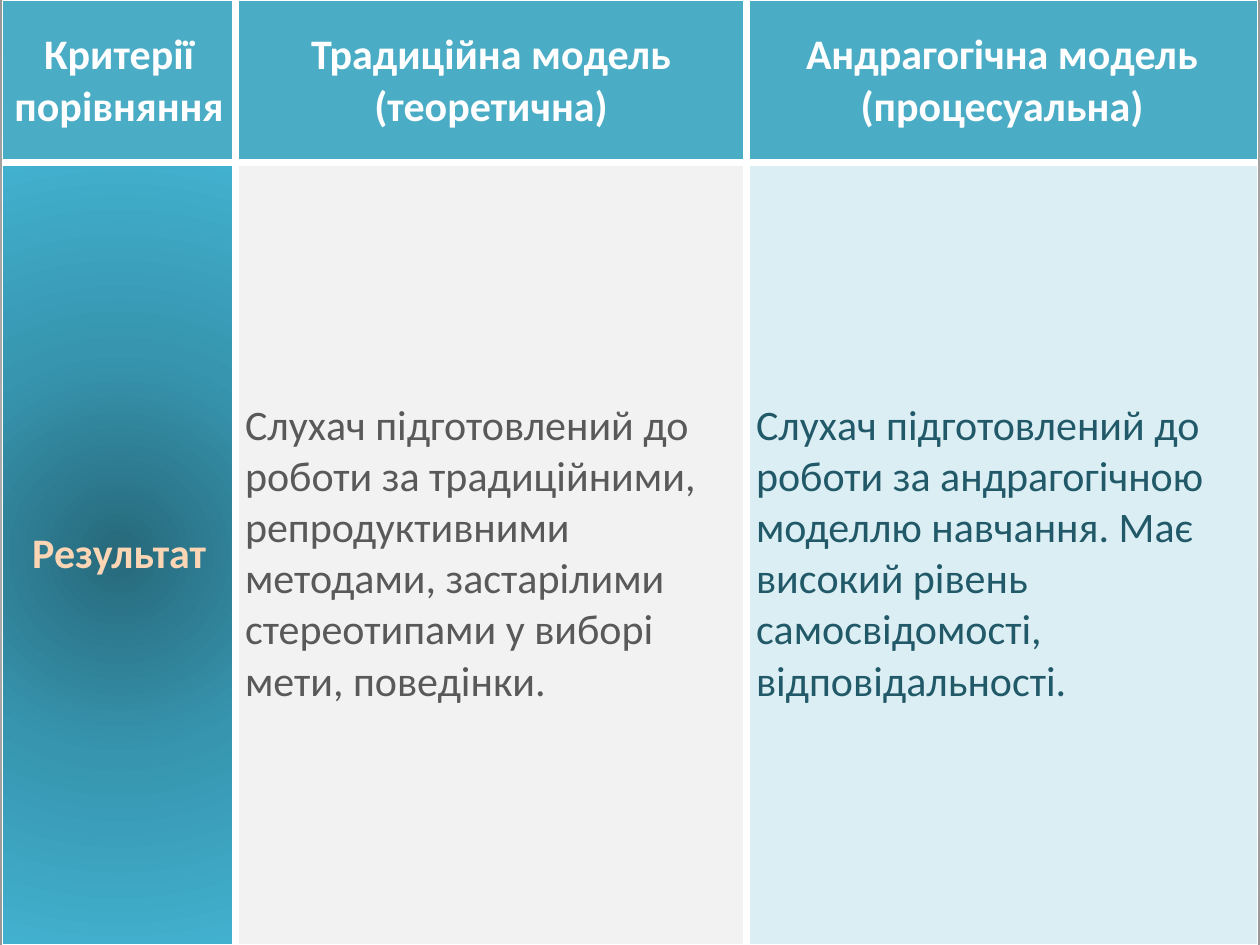
from pptx import Presentation
from pptx.dml.color import RGBColor
from pptx.enum.text import MSO_ANCHOR, PP_ALIGN
from pptx.oxml import parse_xml
from pptx.oxml.ns import nsdecls
from pptx.util import Cm, Pt

COLORS = {
    "white": "FFFFFF", "grey": "979797", "header": "4BACC6",
    "dark": "27697B", "middle": "3795AF", "light": "42B1CF",
    "peach": "FCD5B5", "text": "595959", "teal": "215968",
    "plain": "F2F2F2", "pale": "DBEEF4",
}
CELL = {
    "margin_left": Cm(0.19), "margin_right": Cm(0.19),
    "margin_top": 0, "margin_bottom": 0,
    "vertical_anchor": MSO_ANCHOR.MIDDLE,
}
FONT = {"name": "Calibri", "size": Pt(24)}
HEAD = {"fill": ["header"], "color": "white", "bold": True, "align": PP_ALIGN.CENTER}
LABEL = {**HEAD, "fill": ["dark", "middle", "light"], "color": "peach"}
BODY = {"bold": False, "align": PP_ALIGN.LEFT}
TRADITIONAL = {**BODY, "fill": ["plain"], "color": "text"}
ANDRAGOGIC = {**BODY, "fill": ["pale"], "color": "teal"}
ROWS = [
    [
        (["Критерії порівняння"], HEAD),
        (["Традиційна модель", "(теоретична)"], HEAD),
        (["Андрагогічна модель", "(процесуальна)"], HEAD),
    ],
    [
        (["Результат"], LABEL),
        (["Слухач підготовлений до роботи за традиційними, репродуктивними "
          "методами, застарілими стереотипами у виборі мети, поведінки."], TRADITIONAL),
        (["Слухач підготовлений до роботи за андрагогічною моделлю навчання. "
          "Має високий рівень самосвідомості, відповідальності."], ANDRAGOGIC),
    ],
]


class Deck:
    """Holds the style and the current slide and draws each kind of element."""

    def __init__(self):
        self.prs = Presentation()
        self.prs.slide_width, self.prs.slide_height = Cm(25.4), Cm(19.05)
        self.s = self.prs.slides.add_slide(self.prs.slide_layouts[6])

    def fill_xml(self, names, ns=""):
        colors = [f'<a:srgbClr val="{COLORS[n]}"/>' for n in names]
        if len(colors) == 1:
            return f"<a:solidFill {ns}>{colors[0]}</a:solidFill>"
        step = 100000 // (len(colors) - 1)
        stops = "".join(f'<a:gs pos="{i * step}">{c}</a:gs>' for i, c in enumerate(colors))
        return (f'<a:gradFill {ns} rotWithShape="1"><a:gsLst>{stops}</a:gsLst>'
                '<a:path path="circle"><a:fillToRect l="50000" t="50000" '
                'r="50000" b="50000"/></a:path></a:gradFill>')

    def background(self, names):
        bg = parse_xml(f'<p:bg {nsdecls("p", "a")}><p:bgPr>{self.fill_xml(names)}'
                       '<a:effectLst/></p:bgPr></p:bg>')
        self.s.element.cSld.insert(0, bg)

    def cell(self, cell, lines, style, outer):
        for key, value in CELL.items():
            setattr(cell, key, value)
        tf = cell.text_frame
        for i, line in enumerate(lines):
            p = tf.add_paragraph() if i else tf.paragraphs[0]
            p.alignment = style["align"]
            r = p.add_run()
            r.text = line
            for key, value in {**FONT, "bold": style["bold"]}.items():
                setattr(r.font, key, value)
            r.font.color.rgb = RGBColor.from_string(COLORS[style["color"]])
        tcPr = cell._tc.get_or_add_tcPr()
        ns = nsdecls("a")
        for side, is_outer in outer.items():
            width = Pt(1 if is_outer else 4.5)
            tcPr.append(parse_xml(f'<a:ln{side} {ns} w="{width}">'
                                  f'{self.fill_xml(["white"])}</a:ln{side}>'))
        tcPr.append(parse_xml(self.fill_xml(style["fill"], ns)))

    def table(self, rows, left, top, widths, heights):
        sp = self.s.shapes.add_table(len(rows), len(widths), Cm(left), Cm(top),
                                     Cm(sum(widths)), Cm(sum(heights)))
        tbl = sp.table
        for col, width in zip(tbl.columns, widths):
            col.width = Cm(width)
        for row, height in zip(tbl.rows, heights):
            row.height = Cm(height)
        for y, row in enumerate(rows):
            for x, (lines, style) in enumerate(row):
                outer = {"L": x == 0, "R": x == len(widths) - 1,
                         "T": y == 0, "B": y == len(rows) - 1}
                self.cell(tbl.cell(y, x), lines, style, outer)


def main():
    deck = Deck()
    deck.background(["white", "grey"])
    deck.table(ROWS, 0.05, 0, [4.7, 10.3, 10.3], [3.28, 15.77])
    deck.prs.save("out.pptx")


if __name__ == "__main__":
    main()
